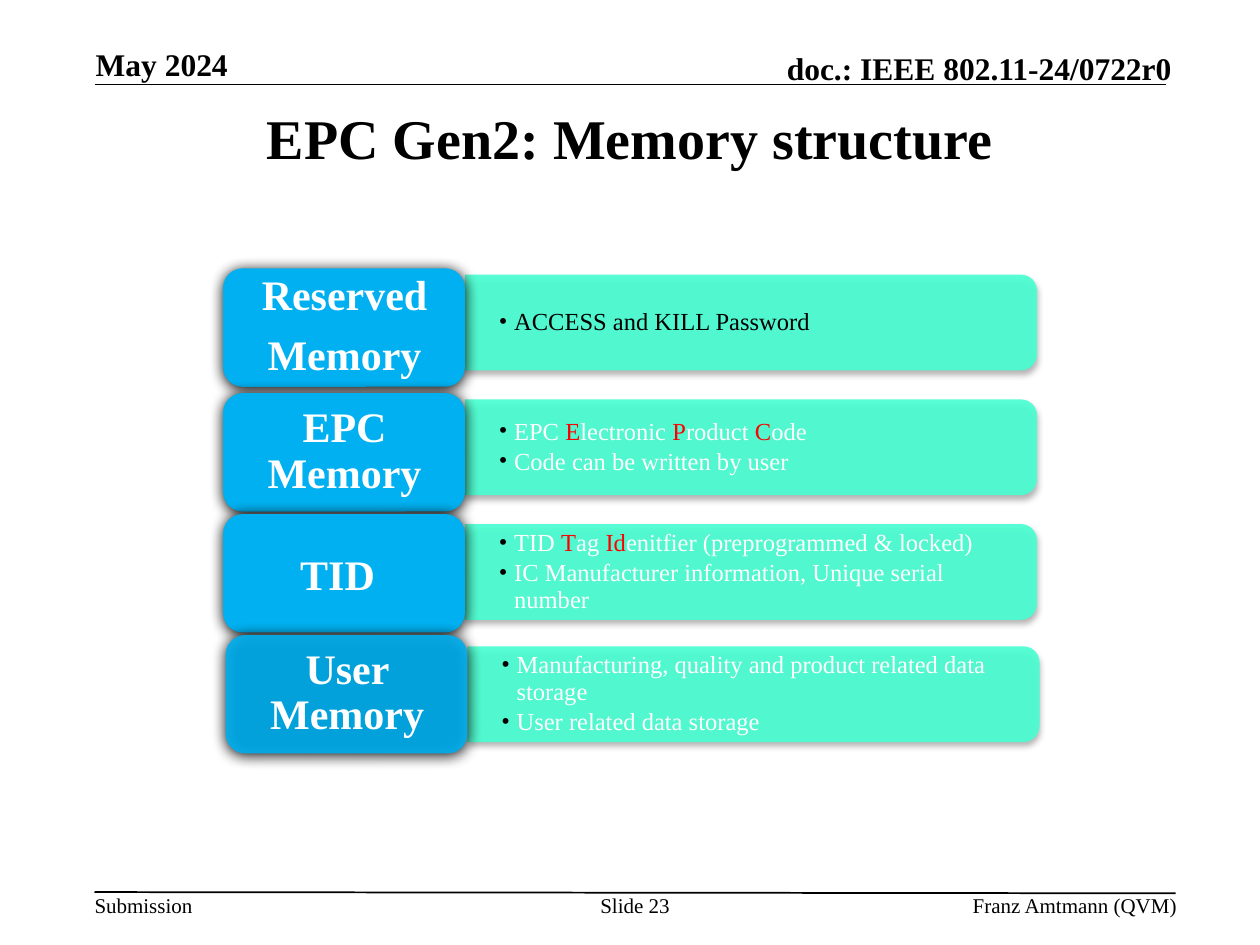
import pptx
import pptx.util
import pptx.dml.color
import pptx.enum.shapes
import pptx.enum.text
import pptx.oxml
import pptx.oxml.ns
from lxml import etree

Inches, Pt = pptx.util.Inches, pptx.util.Pt
SHAPE = pptx.enum.shapes.MSO_SHAPE
ALIGN = {"left": pptx.enum.text.PP_ALIGN.LEFT,
         "center": pptx.enum.text.PP_ALIGN.CENTER,
         "right": pptx.enum.text.PP_ALIGN.RIGHT}
ANCHOR = {"top": pptx.enum.text.MSO_ANCHOR.TOP,
          "middle": pptx.enum.text.MSO_ANCHOR.MIDDLE,
          "bottom": pptx.enum.text.MSO_ANCHOR.BOTTOM}
FONT = "Times New Roman"
COLORS = {"black": "000000", "white": "FFFFFF", "red": "FF0000",
          "card": "00B0F0", "panel": "47FFD1"}

# A paragraph is a list of spans; a span is text or (text, format changes).
RED = {"color": "red"}
BANKS = [
    {"left": 1.77, "card_top": 2.13, "panel_top": 2.18,
     "label": [["Reserved"], ["Memory"]],
     "points": [[("ACCESS and KILL Password", {"color": "black"})]]},
    {"left": 1.77, "card_top": 3.12, "panel_top": 3.17,
     "label": [["EPC Memory"]],
     "points": [["EPC ", ("E", RED), "lectronic ", ("P", RED), "roduct ",
                 ("C", RED), "ode"],
                ["Code can be written by user"]]},
    {"left": 1.77, "card_top": 4.08, "panel_top": 4.16,
     "label": [["TID", (" ", {"size": 32})]],
     "points": [["TID ", ("T", RED), "ag ", ("Id", RED),
                 "enitfier (preprogrammed & locked)"],
                ["IC Manufacturer information, Unique serial number"]]},
    {"left": 1.79, "card_top": 5.04, "panel_top": 5.13, "card_alpha": 90,
     "label": [["User Memory"]],
     "points": [["Manufacturing, quality and product related data storage"],
                ["User related data storage"]]},
]
FRAME_TEXTS = [
    ("Submission", (0.75, 7.08, 0.78, 0.2), {"size": 12, "wrap": False}),
    ("doc.: IEEE 802.11-24/0722r0", (5.47, 0.39, 3.83, 0.3),
     {"size": 18, "bold": True, "align": "right", "anchor": "bottom"}),
    ("EPC Gen2: Memory structure", (0.75, 0.75, 8.5, 0.67),
     {"size": 32, "bold": True, "align": "center", "anchor": "middle",
      "insets": (0.1, 0.05)}),
    ("Slide 23", (4.75, 7.08, 0.58, 0.4), {"size": 12, "align": "center"}),
    ("Franz Amtmann (QVM)", (5.86, 7.08, 3.48, 0.2),
     {"size": 12, "align": "right"}),
    ("May 2024", (0.76, 0.36, 2.05, 0.3),
     {"size": 18, "bold": True, "anchor": "bottom"}),
]
RULES = [((0.75, 0.67), (9.25, 0.67)), ((0.75, 7.08), (9.33, 7.09))]
CARD_W, CARD_H = 1.92, 0.94
PANEL_W, PANEL_H = 4.54, 0.76


def rgb(name):
    return pptx.dml.color.RGBColor.from_string(COLORS[name])


def add_xml(parent, tag, **attributes):
    element = etree.SubElement(parent, pptx.oxml.ns.qn(tag))
    for key, value in attributes.items():
        element.set(key, str(value))
    return element


def add_bullet(para):
    props = para._p.get_or_add_pPr()
    indent = Inches(0.12)
    props.set("marL", str(indent))
    props.set("indent", str(-indent))
    add_xml(add_xml(props, "a:buClr"), "a:srgbClr", val=COLORS["black"])
    add_xml(props, "a:buFont", typeface=FONT)
    add_xml(props, "a:buChar", char="•")


def add_text(page, paragraphs, at, size=12, color="black", bold=False,
             align="left", anchor="top", insets=(0, 0), wrap=True,
             line_spacing=None, space_after=None, bullet=False):
    box = page.shapes.add_textbox(*map(Inches, at))
    frame = box.text_frame
    frame.word_wrap = wrap
    frame.vertical_anchor = ANCHOR[anchor]
    frame.margin_left = frame.margin_right = Inches(insets[0])
    frame.margin_top = frame.margin_bottom = Inches(insets[1])
    for index, spans in enumerate(paragraphs):
        para = frame.add_paragraph() if index else frame.paragraphs[0]
        para.alignment = ALIGN[align]
        if line_spacing:
            para.line_spacing = line_spacing
        if space_after:
            para.space_after = Pt(space_after)
        if bullet:
            add_bullet(para)
        for item in spans:
            text, changes = (item, {}) if isinstance(item, str) else item
            span = para.add_run()
            span.text = text
            span.font.name = FONT
            span.font.size = Pt(changes.get("size", size))
            span.font.bold = bold
            span.font.color.rgb = rgb(changes.get("color", color))


def add_block(page, kind, at, fill, alpha, shadow, rotation=0):
    """Add a borderless shape; shadow is (opacity %, blur pt, distance pt)."""
    block = page.shapes.add_shape(kind, *map(Inches, at))
    block.rotation = rotation
    block.shadow.inherit = False
    block.fill.solid()
    block.fill.fore_color.rgb = rgb(fill)
    block.line.fill.background()
    props = block._element.spPr
    if alpha < 100:
        tint = props.find(".//" + pptx.oxml.ns.qn("a:srgbClr"))
        add_xml(tint, "a:alpha", val=alpha * 1000)
    opacity, blur, distance = shadow
    outer = add_xml(props.find(pptx.oxml.ns.qn("a:effectLst")), "a:outerShdw",
                    blurRad=Pt(blur), dist=Pt(distance), dir=90 * 60000,
                    rotWithShape=0)
    shade = add_xml(outer, "a:srgbClr", val=COLORS["black"])
    add_xml(shade, "a:alpha", val=opacity * 1000)


def add_rule(page, start, end):
    rule = page.shapes.add_connector(
        pptx.enum.shapes.MSO_CONNECTOR.STRAIGHT, *map(Inches, start + end))
    rule.line.color.rgb = rgb("black")
    rule.line.width = Pt(1)
    add_xml(rule._element.spPr, "a:effectLst")


def add_bank(page, bank):
    left, card_top, panel_top = bank["left"], bank["card_top"], bank["panel_top"]
    panel_left = left + CARD_W
    # The panel is drawn upright and turned so its round corners face right.
    shift = (PANEL_W - PANEL_H) / 2
    add_block(page, SHAPE.ROUND_2_SAME_RECTANGLE,
              (panel_left + shift, panel_top - shift, PANEL_H, PANEL_W),
              "panel", 90, (32, 3.5, 2.2), rotation=90)
    add_text(page, bank["points"],
             (panel_left, panel_top + 0.04, PANEL_W - 0.03, PANEL_H - 0.08),
             size=14, color="white", anchor="middle", insets=(0.27, 0.14),
             line_spacing=0.9, space_after=2, bullet=True)
    add_block(page, SHAPE.ROUNDED_RECTANGLE, (left, card_top, CARD_W, CARD_H),
              "card", bank.get("card_alpha", 100), (100, 8.5, 1))
    add_text(page, bank["label"],
             (left + 0.05, card_top + 0.04, CARD_W - 0.09, CARD_H - 0.09),
             size=24, color="white", bold=True, align="center",
             anchor="middle", insets=(0.1, 0.05), line_spacing=0.9,
             space_after=8.5)


def main():
    deck = pptx.Presentation()
    deck.slide_width, deck.slide_height = Inches(10), Inches(7.5)
    page = deck.slides.add_slide(deck.slide_layouts[6])
    for start, end in RULES:
        add_rule(page, start, end)
    for text, at, style in FRAME_TEXTS:
        add_text(page, [[text]], at, **style)
    for bank in BANKS:
        add_bank(page, bank)
    deck.save("out.pptx")


if __name__ == "__main__":
    main()
